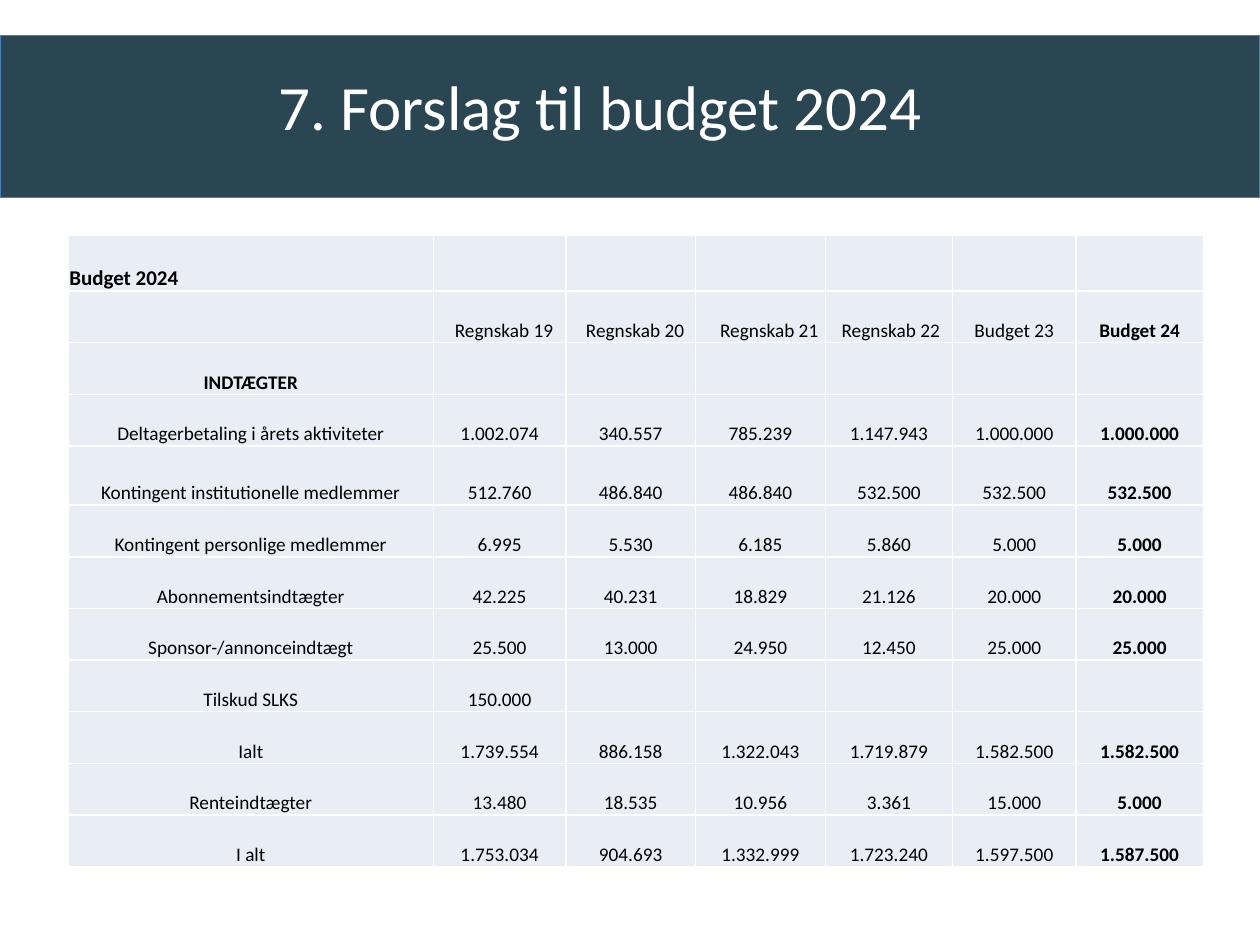
from lxml import etree
from pptx import Presentation
from pptx.dml.color import RGBColor
from pptx.enum import shapes, text
from pptx.oxml import ns
from pptx.util import Inches, Pt

COLORS = {
    "banner": "2A4652",
    "banner_line": "4B7EBC",
    "white": "FFFFFF",
    "black": "000000",
    "cell": "E9EDF4",
}
FONT = "Calibri"

COLUMN_WIDTHS = [2.9, 1.05, 1.03, 1.03, 1.01, 0.98, 1.01]
ROW_HEIGHT = 0.41
TALL_ROWS = {0: 0.44, 4: 0.47}
HEADER_INDENTS = {1: 0.08, 2: 0.08, 3: 0.15, 4: 0.04}
BUDGET_ROWS = [
    ["Budget 2024"],
    ["", "Regnskab 19", "Regnskab 20", "Regnskab 21", "Regnskab 22", "Budget 23", "Budget 24"],
    ["INDTÆGTER"],
    ["Deltagerbetaling i årets aktiviteter",
     "1.002.074", "340.557", "785.239", "1.147.943", "1.000.000", "1.000.000"],
    ["Kontingent institutionelle medlemmer",
     "512.760", "486.840", "486.840", "532.500", "532.500", "532.500"],
    ["Kontingent personlige medlemmer", "6.995", "5.530", "6.185", "5.860", "5.000", "5.000"],
    ["Abonnementsindtægter", "42.225", "40.231", "18.829", "21.126", "20.000", "20.000"],
    ["Sponsor-/annonceindtægt", "25.500", "13.000", "24.950", "12.450", "25.000", "25.000"],
    ["Tilskud SLKS", "150.000"],
    ["Ialt", "1.739.554", "886.158", "1.322.043", "1.719.879", "1.582.500", "1.582.500"],
    ["Renteindtægter", "13.480", "18.535", "10.956", "3.361", "15.000", "5.000"],
    ["I alt", "1.753.034", "904.693", "1.332.999", "1.723.240", "1.597.500", "1.587.500"],
]


def rgb(name):
    return RGBColor.from_string(COLORS[name])


def style_font(paragraph, size, color, bold=False):
    font = paragraph.font
    font.name, font.size, font.bold = FONT, Pt(size), bold
    font.color.rgb = rgb(color)


def add_banner(slide, left, top, width, height):
    banner = slide.shapes.add_shape(
        shapes.MSO_SHAPE.RECTANGLE, left, top, width, height)
    banner.shadow.inherit = False
    banner.fill.solid()
    banner.fill.fore_color.rgb = rgb("banner")
    banner.line.color.rgb = rgb("banner_line")
    banner.line.width = Pt(0.75)

    title = slide.shapes.add_textbox(
        left + Inches(2.11), top + Inches(0.21), width - Inches(2.28), Inches(0.71))
    title.text_frame.word_wrap = True
    heading = title.text_frame.paragraphs[0]
    heading.text = "7. Forslag til budget 2024"
    style_font(heading, 36, "white")


def add_borders(cell):
    properties = cell._tc.get_or_add_tcPr()
    for side in ("a:lnL", "a:lnR", "a:lnT", "a:lnB"):
        border = etree.SubElement(properties, ns.qn(side), w=str(Pt(1)))
        fill = etree.SubElement(border, ns.qn("a:solidFill"))
        etree.SubElement(fill, ns.qn("a:srgbClr"), val=COLORS["white"])


def style_cell(cell, row, column):
    inset = Inches(0.01 if column < 5 else 0)
    cell.margin_left = cell.margin_right = cell.margin_top = inset
    cell.margin_bottom = 0
    if row == 1 and column in HEADER_INDENTS:
        cell.margin_left = Inches(HEADER_INDENTS[column])
    cell.vertical_anchor = text.MSO_ANCHOR.BOTTOM
    add_borders(cell)
    cell.fill.solid()
    cell.fill.fore_color.rgb = rgb("cell")

    paragraph = cell.text_frame.paragraphs[0]
    if row > 0:
        paragraph.alignment = text.PP_ALIGN.CENTER
    bold = row in (0, 2) or column == len(COLUMN_WIDTHS) - 1
    style_font(paragraph, 12 if row == 0 else 11, "black", bold)


def add_budget_table(slide, left, top, width, height):
    table = slide.shapes.add_table(
        len(BUDGET_ROWS), len(COLUMN_WIDTHS), left, top, width, height).table
    table.first_row = table.horz_banding = False
    for column, column_width in zip(table.columns, COLUMN_WIDTHS):
        column.width = Inches(column_width)
    for r, entries in enumerate(BUDGET_ROWS):
        table.rows[r].height = Inches(TALL_ROWS.get(r, ROW_HEIGHT))
        for c in range(len(COLUMN_WIDTHS)):
            cell = table.cell(r, c)
            if c < len(entries):
                cell.text = entries[c]
            style_cell(cell, r, c)


def main():
    deck = Presentation()
    deck.slide_width, deck.slide_height = Inches(10), Inches(7.5)
    slide = deck.slides.add_slide(deck.slide_layouts[6])
    add_banner(slide, 0, Inches(0.28), Inches(10), Inches(1.29))
    add_budget_table(slide, Inches(0.54), Inches(1.87), Inches(9.02), Inches(5.02))
    deck.save("out.pptx")


if __name__ == "__main__":
    main()
